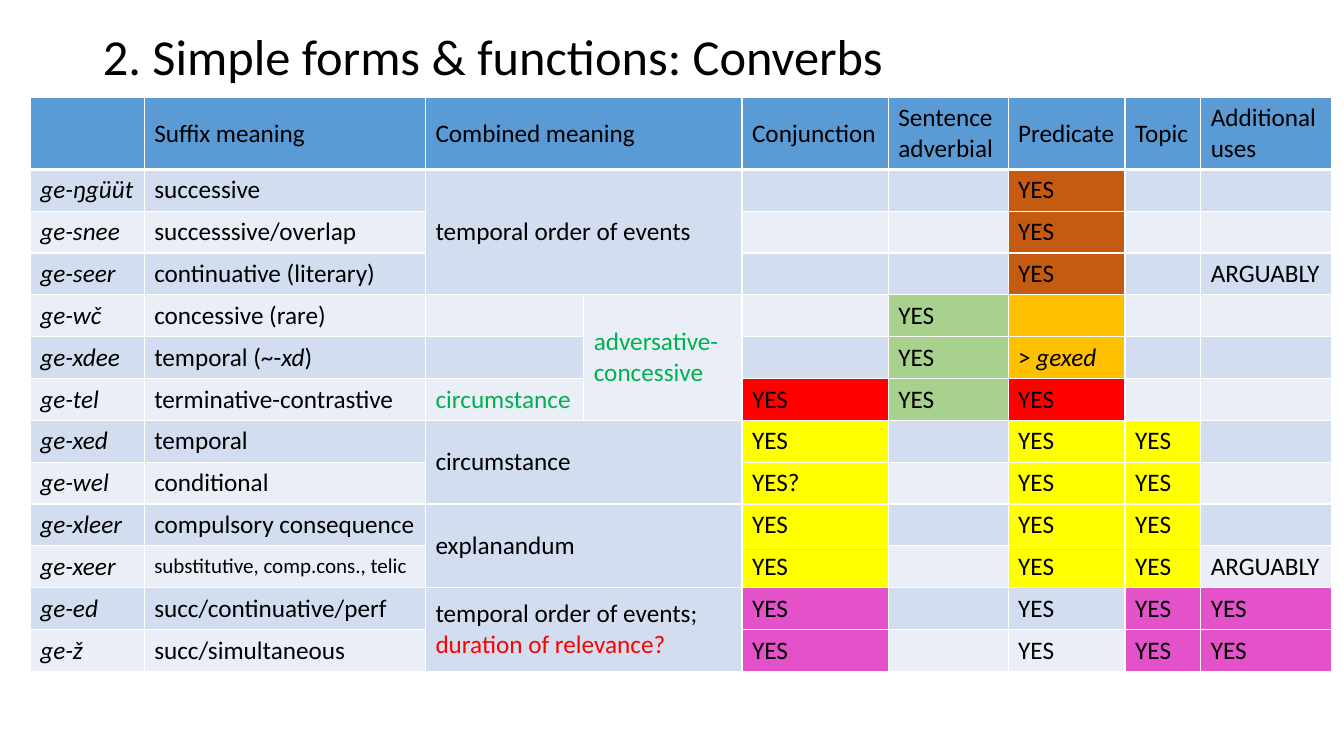
from lxml.etree import SubElement
from pptx import Presentation
from pptx.dml.color import RGBColor
from pptx.enum.text import MSO_ANCHOR, PP_ALIGN
from pptx.oxml.ns import qn
from pptx.util import Inches, Pt

BLACK = RGBColor(0x00, 0x00, 0x00)
WHITE = RGBColor(0xFF, 0xFF, 0xFF)
HEADER_BLUE = RGBColor(0x5B, 0x9B, 0xD5)
BAND_DARK = RGBColor(0xD2, 0xDE, 0xEF)
BAND_LIGHT = RGBColor(0xEA, 0xEF, 0xF7)
BROWN = RGBColor(0xC5, 0x5A, 0x11)
LIGHT_GREEN = RGBColor(0xA9, 0xD1, 0x8E)
ORANGE = RGBColor(0xFF, 0xC0, 0x00)
RED = RGBColor(0xFF, 0x00, 0x00)
YELLOW = RGBColor(0xFF, 0xFF, 0x00)
PINK = RGBColor(0xE3, 0x52, 0xC9)
TEXT_GREEN = RGBColor(0x00, 0xB0, 0x50)

FORM, SUFFIX, MEANING, MEANING_2, CONJ, ADVERBIAL, PREDICATE, TOPIC, OTHER = range(9)
COLUMN_WIDTHS = [1.13, 2.79, 1.57, 1.57, 1.45, 1.19, 1.16, 0.75, 1.3]
HEADER_HEIGHT, ROW_HEIGHT = 0.71, 0.415
HEADERS = {
    SUFFIX: "Suffix meaning", MEANING: "Combined meaning", CONJ: "Conjunction",
    ADVERBIAL: "Sentence adverbial", PREDICATE: "Predicate", TOPIC: "Topic",
    OTHER: "Additional\nuses",
}

ITALIC = {"italic": True}
SMALL = {"size": 15}
GREEN_TEXT = {"color": TEXT_GREEN}
RED_TEXT = {"color": RED}


def yes(fill, *columns):
    """Map each column to a YES cell with the given fill."""
    return {column: ([("YES", {})], fill) for column in columns}


ARGUABLY = {OTHER: ([("ARGUABLY", {})], None)}
GEXED = {PREDICATE: ([("> ", {}), ("gexed", ITALIC)], ORANGE)}
# form, runs of the suffix meaning, cells under the function columns
CONVERBS = [
    ("ge-ŋgüüt", [("successive", {})], yes(BROWN, PREDICATE)),
    ("ge-snee", [("successsive/overlap", {})], yes(BROWN, PREDICATE)),
    ("ge-seer", [("continuative (literary)", {})], yes(BROWN, PREDICATE) | ARGUABLY),
    ("ge-wč", [("concessive (rare)", {})],
     yes(LIGHT_GREEN, ADVERBIAL) | {PREDICATE: ([], ORANGE)}),
    ("ge-xdee", [("temporal (~-", {}), ("xd", ITALIC), (")", {})],
     yes(LIGHT_GREEN, ADVERBIAL) | GEXED),
    ("ge-tel", [("terminative-contrastive", {})],
     yes(RED, CONJ, PREDICATE) | yes(LIGHT_GREEN, ADVERBIAL)),
    ("ge-xed", [("temporal", {})], yes(YELLOW, CONJ, PREDICATE, TOPIC)),
    ("ge-wel", [("conditional", {})],
     yes(YELLOW, PREDICATE, TOPIC) | {CONJ: ([("YES?", {})], YELLOW)}),
    ("ge-xleer", [("compulsory consequence", {})], yes(YELLOW, CONJ, PREDICATE, TOPIC)),
    ("ge-xeer", [("substitutive, comp.cons., telic", SMALL)],
     yes(YELLOW, CONJ, PREDICATE, TOPIC) | ARGUABLY),
    ("ge-ed", [("succ/continuative/perf", {})],
     yes(PINK, CONJ, TOPIC, OTHER) | yes(None, PREDICATE)),
    ("ge-ž", [("succ/simultaneous", {})],
     yes(PINK, CONJ, TOPIC, OTHER) | yes(None, PREDICATE)),
]
# first row, last row, first column, last column, runs
COMBINED_MEANINGS = [
    (1, 3, MEANING, MEANING_2, [("temporal order of events", {})]),
    (4, 6, MEANING_2, MEANING_2, [("adversative-concessive", GREEN_TEXT)]),
    (6, 6, MEANING, MEANING, [("circumstance", GREEN_TEXT)]),
    (7, 8, MEANING, MEANING_2, [("circumstance", {})]),
    (9, 10, MEANING, MEANING_2, [("explanandum", {})]),
    (11, 12, MEANING, MEANING_2,
     [("temporal order of events; ", {}), ("duration of relevance?", RED_TEXT)]),
]


class SlideBuilder:
    font = "Calibri"
    title_size = 36
    text_size = 18

    def __init__(self, prs):
        self.s = prs.slides.add_slide(prs.slide_layouts[5])

    def add_run(self, p, text, size=text_size, italic=False, color=BLACK):
        for i, line in enumerate(text.split("\n")):
            if i:
                p.add_line_break()
            r = p.add_run()
            r.text = line
            r.font.name = self.font
            r.font.size = Pt(size)
            r.font.italic = italic
            r.font.color.rgb = color

    def title(self, text, left, top, width, height):
        sp = self.s.shapes.title
        sp.left, sp.top = Inches(left), Inches(top)
        sp.width, sp.height = Inches(width), Inches(height)
        tf = sp.text_frame
        tf.word_wrap = True
        tf.vertical_anchor = MSO_ANCHOR.MIDDLE
        p = tf.paragraphs[0]
        p.alignment = PP_ALIGN.LEFT
        p.line_spacing = 0.9
        self.add_run(p, text, self.title_size)

    def table(self, left, top, widths, heights):
        frame = self.s.shapes.add_table(
            len(heights), len(widths), Inches(left), Inches(top),
            Inches(sum(widths)), Inches(sum(heights)))
        table = frame.table
        for column, width in zip(table.columns, widths):
            column.width = Inches(width)
        for row, height in zip(table.rows, heights):
            row.height = Inches(height)
        return table

    def borders(self, cell, **widths):
        """Draw white borders; widths are points keyed by side (L, R, T, B)."""
        tc_pr = cell._tc.get_or_add_tcPr()
        for i, side in enumerate("LRTB"):
            ln = SubElement(tc_pr, qn(f"a:ln{side}"), w=str(Pt(widths.get(side, 1))))
            fill = SubElement(ln, qn("a:solidFill"))
            SubElement(fill, qn("a:srgbClr"), val=str(WHITE))
            tc_pr.insert(i, ln)

    def cell_style(self, cell, fill, **border_widths):
        cell.fill.solid()
        cell.fill.fore_color.rgb = fill
        cell.vertical_anchor = MSO_ANCHOR.MIDDLE
        cell.margin_right = Inches(0.08)
        self.borders(cell, **border_widths)

    def cell_text(self, cell, runs):
        p = cell.text_frame.paragraphs[0]
        for text, style in runs:
            self.add_run(p, text, **style)


def add_converb_table(builder):
    heights = [HEADER_HEIGHT] + [ROW_HEIGHT] * len(CONVERBS)
    table = builder.table(0.3, 0.97, COLUMN_WIDTHS, heights)

    for column in range(len(COLUMN_WIDTHS)):
        builder.cell_style(table.cell(0, column), HEADER_BLUE, B=3)
    for column, heading in HEADERS.items():
        builder.cell_text(table.cell(0, column), [(heading, {})])
    table.cell(0, MEANING).merge(table.cell(0, MEANING_2))

    for row, (form, suffix, functions) in enumerate(CONVERBS, start=1):
        band = BAND_DARK if row % 2 else BAND_LIGHT
        contents = {FORM: ([(form, ITALIC)], None), SUFFIX: (suffix, None)} | functions
        for column in range(len(COLUMN_WIDTHS)):
            runs, fill = contents.get(column, ([], None))
            cell = table.cell(row, column)
            builder.cell_style(cell, fill or band, T=3 if row == 1 else 1)
            builder.cell_text(cell, runs)

    for first_row, last_row, first_column, last_column, runs in COMBINED_MEANINGS:
        cell = table.cell(first_row, first_column)
        if (first_row, first_column) != (last_row, last_column):
            cell.merge(table.cell(last_row, last_column))
        builder.cell_text(cell, runs)


def main():
    prs = Presentation()
    prs.slide_width, prs.slide_height = Inches(13.33), Inches(7.5)
    builder = SlideBuilder(prs)
    builder.title("2. Simple forms & functions: Converbs", 0.92, 0.21, 11.5, 0.75)
    add_converb_table(builder)
    prs.save("out.pptx")


if __name__ == "__main__":
    main()
